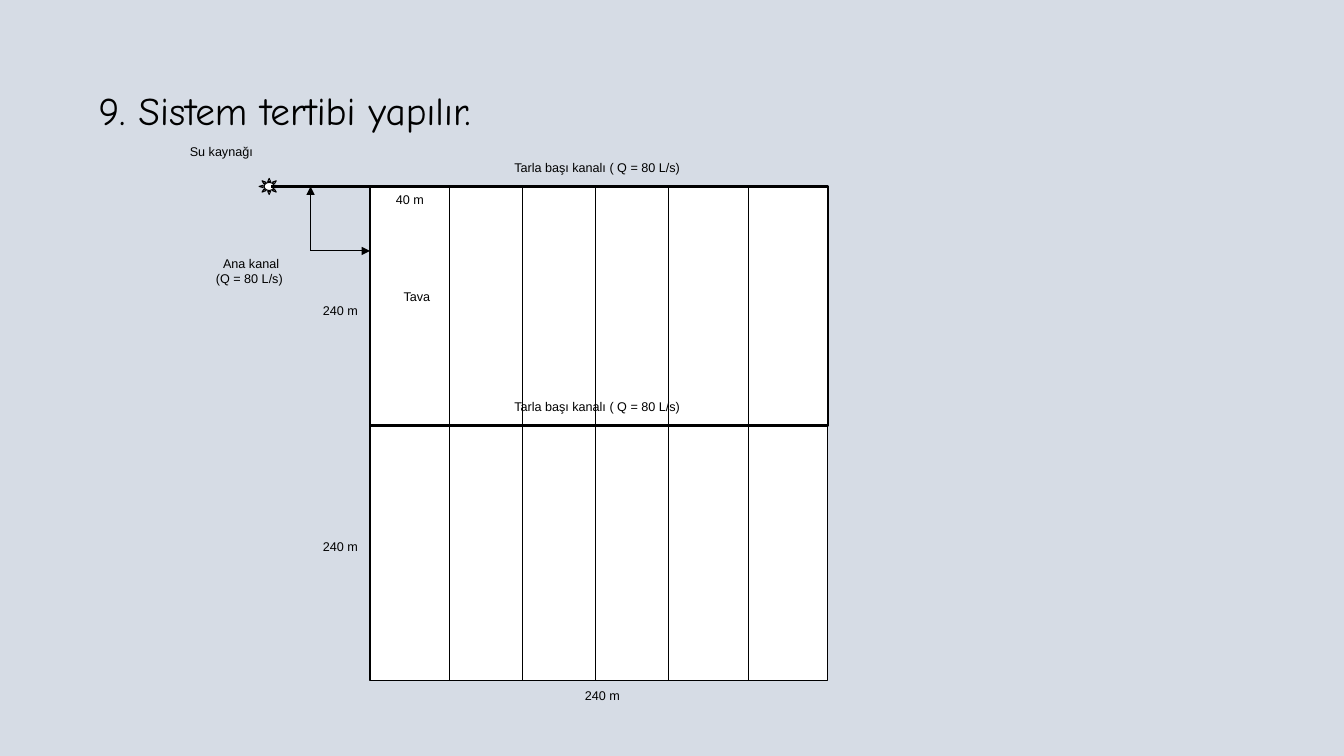
from pptx import Presentation
from pptx.dml.color import RGBColor
from pptx.enum.dml import MSO_LINE
from pptx.enum.shapes import MSO_CONNECTOR, MSO_SHAPE
from pptx.enum.text import PP_ALIGN
from pptx.oxml.ns import qn
from pptx.util import Inches, Pt
from lxml import etree

BACKGROUND = RGBColor(0xD6, 0xDC, 0xE5)
WHITE = RGBColor(0xFF, 0xFF, 0xFF)
BLACK = RGBColor(0, 0, 0)
LEFT, CENTER = PP_ALIGN.LEFT, PP_ALIGN.CENTER
RECT, SUN = MSO_SHAPE.RECTANGLE, MSO_SHAPE.SUN
STRAIGHT, SOLID = MSO_CONNECTOR.STRAIGHT, MSO_LINE.SOLID

# Field geometry in inches
FIELD_LEFT, FIELD_RIGHT = 3.67, 8.21
FIELD_TOP, FIELD_MIDDLE, FIELD_BOTTOM = 1.85, 4.22, 6.75
BORDERS = (4.46, 5.185, 5.91, 6.63, 7.42)
SOURCE_X = 2.69
ARROW_X, ARROW_Y = 3.08, 2.49

CANAL_LABEL = "Tarla başı kanalı ( Q = 80 L/s) "
LABELS = (
    ("Su kaynağı", 1.7, 1.38, 0.99, 0.79),
    ("Ana kanal\n(Q = 80 L/s) ", 1.7, 2.49, 1.58, 0.79),
    ("40 m", 3.57, 1.85, 0.99, 0.79),
    (CANAL_LABEL, 4.46, 1.54, 2.96, 0.79),
    (CANAL_LABEL, 4.46, 3.91, 2.96, 0.79),
    ("Tava", 3.64, 2.82, 0.99, 0.79),
    ("240 m", 2.88, 2.96, 0.99, 0.79),
    ("240 m", 2.88, 5.3, 0.99, 0.79),
    ("240 m", 5.48, 6.78, 0.99, 0.25),
)


def add_text(s, text, x, y, w, h, size=9, font="Arial", align=CENTER):
    tf = s.shapes.add_textbox(Inches(x), Inches(y), Inches(w), Inches(h)).text_frame
    tf.word_wrap = True
    for i, line in enumerate(text.split("\n")):
        p = tf.paragraphs[0] if i == 0 else tf.add_paragraph()
        p.alignment = align
        r = p.add_run()
        r.text = line
        r.font.size = Pt(size)
        r.font.name = font
        r.font.color.rgb = BLACK


def set_line(sp, width=0.75):
    sp.line.color.rgb = BLACK
    sp.line.width = Pt(width)
    sp.line.dash_style = SOLID


def add_box(s, kind, x, y, w, h):
    sp = s.shapes.add_shape(kind, Inches(x), Inches(y), Inches(w), Inches(h))
    sp.shadow.inherit = False
    sp.fill.solid()
    sp.fill.fore_color.rgb = WHITE
    set_line(sp)
    return sp


def add_line(s, x1, y1, x2, y2, arrow=False):
    c = s.shapes.add_connector(STRAIGHT, Inches(x1), Inches(y1), Inches(x2), Inches(y2))
    set_line(c)
    if arrow:
        etree.SubElement(c.line._get_or_add_ln(), qn("a:tailEnd"), type="triangle")
    etree.SubElement(c._element.spPr, qn("a:effectLst"))


def add_canal(s, points):
    (x, y), *rest = [(Inches(a), Inches(b)) for a, b in points]
    builder = s.shapes.build_freeform(x, y)
    builder.add_line_segments(rest, close=False)
    sp = builder.convert_to_shape()
    sp.shadow.inherit = False
    sp.fill.background()
    set_line(sp, 1.75)


def main():
    prs = Presentation()
    prs.slide_width, prs.slide_height = Inches(13.33), Inches(7.5)
    s = prs.slides.add_slide(prs.slide_layouts[6])
    s.background.fill.solid()
    s.background.fill.fore_color.rgb = BACKGROUND

    # Title
    add_text(s, "9. Sistem tertibi yapılır.", 0.88, 0.81, 4.75, 0.57,
             size=28, font="Comic Neue", align=LEFT)

    # Field and the borders between its basins
    add_box(s, RECT, FIELD_LEFT, FIELD_TOP, FIELD_RIGHT - FIELD_LEFT, FIELD_BOTTOM - FIELD_TOP)
    for x in BORDERS:
        add_line(s, x, FIELD_TOP, x, FIELD_BOTTOM)

    # Water source and main canal
    add_line(s, FIELD_LEFT, FIELD_TOP, SOURCE_X, FIELD_TOP)
    source = add_box(s, SUN, 2.57, 1.77, 0.2, 0.16)
    source.adjustments[0] = 0.25
    add_line(s, ARROW_X, ARROW_Y, ARROW_X, FIELD_TOP, arrow=True)
    add_line(s, ARROW_X, ARROW_Y, FIELD_LEFT, ARROW_Y, arrow=True)

    # Canals around the upper half
    add_canal(s, ((SOURCE_X, FIELD_TOP), (FIELD_RIGHT, FIELD_TOP), (FIELD_RIGHT, FIELD_MIDDLE),
                  (FIELD_LEFT, FIELD_MIDDLE), (FIELD_LEFT, FIELD_TOP)))

    # Labels
    for label in LABELS:
        add_text(s, *label)

    prs.save("out.pptx")


if __name__ == "__main__":
    main()
